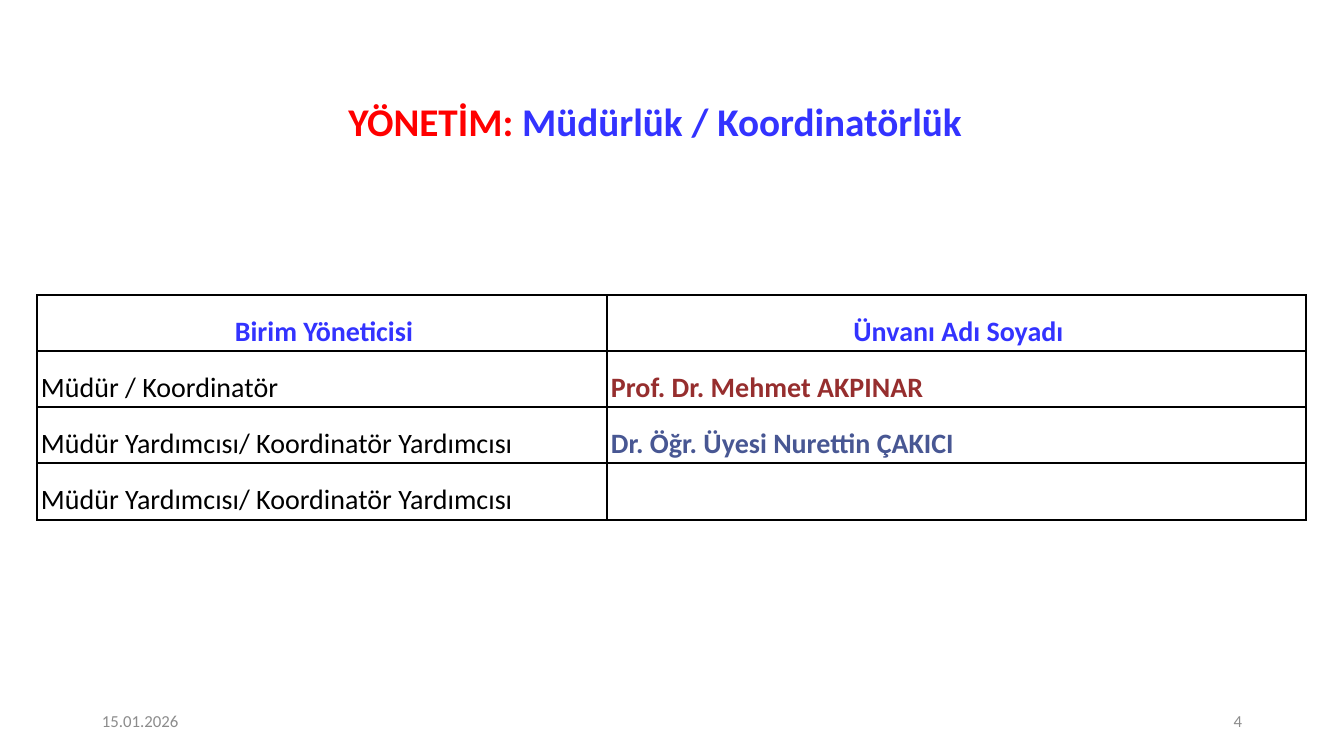
from lxml import etree
from pptx import Presentation
from pptx.dml.color import RGBColor
from pptx.enum.text import MSO_ANCHOR, PP_ALIGN
from pptx.oxml.ns import qn
from pptx.util import Emu, Pt

LEFT, CENTER, RIGHT = PP_ALIGN.LEFT, PP_ALIGN.CENTER, PP_ALIGN.RIGHT
MIDDLE = MSO_ANCHOR.MIDDLE
FONT = "Calibri"
COLORS = {
    "red": "FF0000",
    "blue": "3333FF",
    "black": "000000",
    "maroon": "962E2E",
    "slate": "485793",
    "gray": "8C8C8C",
}

TITLE = [("YÖNETİM: ", "red"), ("Müdürlük / Koordinatörlük", "blue")]
HEADERS = ("Birim Yöneticisi", "Ünvanı Adı Soyadı")
MANAGERS = [
    ("Müdür / Koordinatör", "Prof. Dr. Mehmet AKPINAR", "maroon"),
    ("Müdür Yardımcısı/ Koordinatör Yardımcısı", "Dr. Öğr. Üyesi Nurettin ÇAKICI", "slate"),
    ("Müdür Yardımcısı/ Koordinatör Yardımcısı", "", "black"),
]
DATE, PAGE = "15.01.2026", "4"

SLIDE_SIZE = (1344, 756)
TITLE_BOX = (115, 85, 1080, 77)
TABLE_ORIGIN = (37, 295)
COLUMN_WIDTHS = (570, 699)
ROW_HEIGHTS = (56, 56, 56, 57)
CELL_INDENT = 4
FOOTER_MARGIN, FOOTER_TOP, FOOTER_WIDTH, FOOTER_HEIGHT = 92, 701, 302, 40


def px(length):
    return Emu(round(length * 914400 / 100.8))


def add_text(slide, box, runs, size, align, bold=False):
    """Add a one-paragraph text box; runs are (text, color name) pairs."""
    frame = slide.shapes.add_textbox(*map(px, box)).text_frame
    frame.word_wrap = True
    frame.vertical_anchor = MIDDLE
    paragraph = frame.paragraphs[0]
    paragraph.alignment = align
    set_font(paragraph.font, size, bold)
    for text, color in runs:
        run = paragraph.add_run()
        run.text = text
        run.font.color.rgb = RGBColor.from_string(COLORS[color])
    return paragraph


def set_font(font, size, bold):
    font.name = FONT
    font.size = Pt(size)
    font.bold = bold


def add_borders(cell):
    properties = cell._tc.get_or_add_tcPr()
    for position, side in enumerate(("lnL", "lnR", "lnT", "lnB")):
        line = etree.Element(qn(f"a:{side}"), w=str(Pt(1)))
        fill = etree.SubElement(line, qn("a:solidFill"))
        etree.SubElement(fill, qn("a:srgbClr"), val=COLORS["black"])
        properties.insert(position, line)


def fill_cell(cell, text, color, bold, align):
    cell.margin_left = px(CELL_INDENT)
    cell.margin_right = cell.margin_top = cell.margin_bottom = 0
    cell.vertical_anchor = MIDDLE
    cell.fill.background()
    add_borders(cell)
    cell.text = text
    paragraph = cell.text_frame.paragraphs[0]
    paragraph.alignment = align
    paragraph.line_spacing = 1.5
    set_font(paragraph.font, 20, bold)
    paragraph.font.color.rgb = RGBColor.from_string(COLORS[color])


def add_manager_table(slide):
    size = (sum(COLUMN_WIDTHS), sum(ROW_HEIGHTS))
    table = slide.shapes.add_table(
        len(ROW_HEIGHTS), len(COLUMN_WIDTHS), *map(px, TABLE_ORIGIN + size)
    ).table
    table.first_row = table.horz_banding = False
    for column, width in zip(table.columns, COLUMN_WIDTHS):
        column.width = px(width)
    for row, height in zip(table.rows, ROW_HEIGHTS):
        row.height = px(height)
    for column, header in enumerate(HEADERS):
        fill_cell(table.cell(0, column), header, "blue", True, CENTER)
    for row, (role, name, color) in enumerate(MANAGERS, start=1):
        fill_cell(table.cell(row, 0), role, "black", False, LEFT)
        fill_cell(table.cell(row, 1), name, color, True, LEFT)


def main():
    presentation = Presentation()
    presentation.slide_width, presentation.slide_height = map(px, SLIDE_SIZE)
    slide = presentation.slides.add_slide(presentation.slide_layouts[6])

    title = add_text(slide, TITLE_BOX, TITLE, 28, CENTER, bold=True)
    title.line_spacing = 0.9
    add_manager_table(slide)

    page_left = SLIDE_SIZE[0] - FOOTER_MARGIN - FOOTER_WIDTH
    for left, text, align in ((FOOTER_MARGIN, DATE, LEFT), (page_left, PAGE, RIGHT)):
        box = (left, FOOTER_TOP, FOOTER_WIDTH, FOOTER_HEIGHT)
        add_text(slide, box, [(text, "gray")], 12, align)

    presentation.save("out.pptx")


if __name__ == "__main__":
    main()
